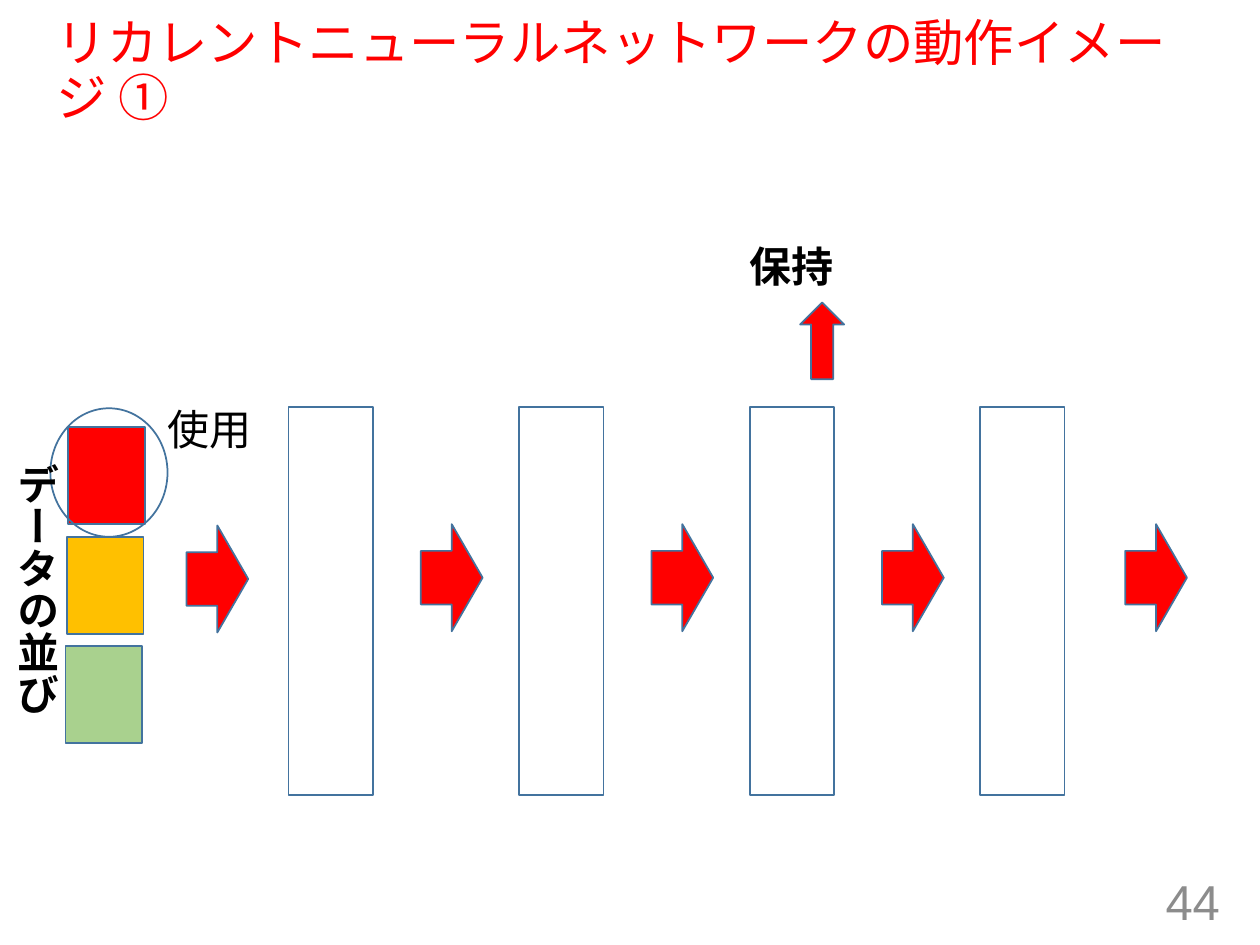
from dataclasses import dataclass

from pptx import Presentation
from pptx.dml.color import RGBColor as RGB
from pptx.enum.shapes import MSO_SHAPE as SHAPE
from pptx.enum.text import MSO_ANCHOR as ANCHOR, MSO_AUTO_SIZE as AUTO, PP_ALIGN as ALIGN
from pptx.util import Inches, Pt


@dataclass(frozen=True)
class Theme:
    red: str = "FF0000"
    amber: str = "FFC000"
    green: str = "A9D18E"
    outline: str = "43739E"
    ink: str = "000000"
    muted: str = "8C8C8C"
    heading: str = "Arial"
    body: str = "Calibri"
    title_size: float = 28.8
    number_size: float = 28
    label_size: float = 24


T = Theme()
COL, ROW = 1.83, 0.87
LAYER_X, LAYER_Y = 2.29, 3.23
ARROW_Y = 4.16
DATA_X, DATA_Y = 0.54, 3.39


def add_shape(kind, x, y, w, h, fill=None):
    sp = s.shapes.add_shape(kind, *map(Inches, (x, y, w, h)))
    sp.shadow.inherit = False
    if fill:
        sp.fill.solid()
        sp.fill.fore_color.rgb = RGB.from_string(fill)
    else:
        sp.fill.background()
    sp.line.color.rgb = RGB.from_string(T.outline)
    sp.line.width = Pt(1)
    return sp


def set_text(sp, text, box, font, size, color, bold=False):
    sp.left, sp.top, sp.width, sp.height = map(Inches, box)
    tf = sp.text_frame
    tf.text = text
    f = tf.paragraphs[0].runs[0].font
    f.name, f.size, f.bold = font, Pt(size), bold
    f.color.rgb = RGB.from_string(color)
    return tf


prs = Presentation()
prs.slide_width, prs.slide_height = Inches(10), Inches(7.5)
s = prs.slides.add_slide(prs.slide_layouts[5])

tf = set_text(s.shapes.title, "リカレントニューラルネットワークの動作イメージ ①",
              (0.35, 0.19, 9.25, 0.77), T.heading, T.title_size, T.red)
tf.word_wrap = True
tf.auto_size = AUTO.NONE
tf.vertical_anchor = ANCHOR.MIDDLE
tf.paragraphs[0].alignment = ALIGN.LEFT
tf.paragraphs[0].line_spacing = 0.9

tf = set_text(s.shapes.add_textbox(0, 0, 0, 0), "44",
              (7.53, 6.95, 2.25, 0.4), T.heading, T.number_size, T.muted)
tf.word_wrap = True
tf.vertical_anchor = ANCHOR.MIDDLE
tf.paragraphs[0].alignment = ALIGN.RIGHT

for i in range(4):
    add_shape(SHAPE.RECTANGLE, LAYER_X + i * COL, LAYER_Y, 0.67, 3.08)

arrows = [(1.48, ARROW_Y + 0.01), (8.93, ARROW_Y)]
arrows += [(3.34 + i * COL, ARROW_Y) for i in range(3)]
for x, y in arrows:
    add_shape(SHAPE.RIGHT_ARROW, x, y, 0.49, 0.85, T.red)

for i, color in enumerate((T.red, T.amber, T.green)):
    add_shape(SHAPE.RECTANGLE, DATA_X - i * 0.01, DATA_Y + i * ROW, 0.61, 0.77, color)

sp = add_shape(SHAPE.RIGHT_ARROW, 6.22, 2.53, 0.61, 0.35, T.red)
sp.rotation = 270
add_shape(SHAPE.OVAL, 0.4, 3.24, 0.93, 1.02)

labels = [
    ("データの並び", (-0.07, 3.58, 0.61, 2.12), True, "eaVert"),
    ("保持", (5.85, 1.86, 0.88, 0.5), True, "horz"),
    ("使用", (1.23, 3.15, 0.88, 0.5), False, "horz"),
]
for text, box, bold, direction in labels:
    tf = set_text(s.shapes.add_textbox(0, 0, 0, 0), text, box,
                  T.body, T.label_size, T.ink, bold)
    tf.word_wrap = False
    tf.auto_size = AUTO.SHAPE_TO_FIT_TEXT
    tf._txBody.bodyPr.set("vert", direction)

prs.save("out.pptx")
